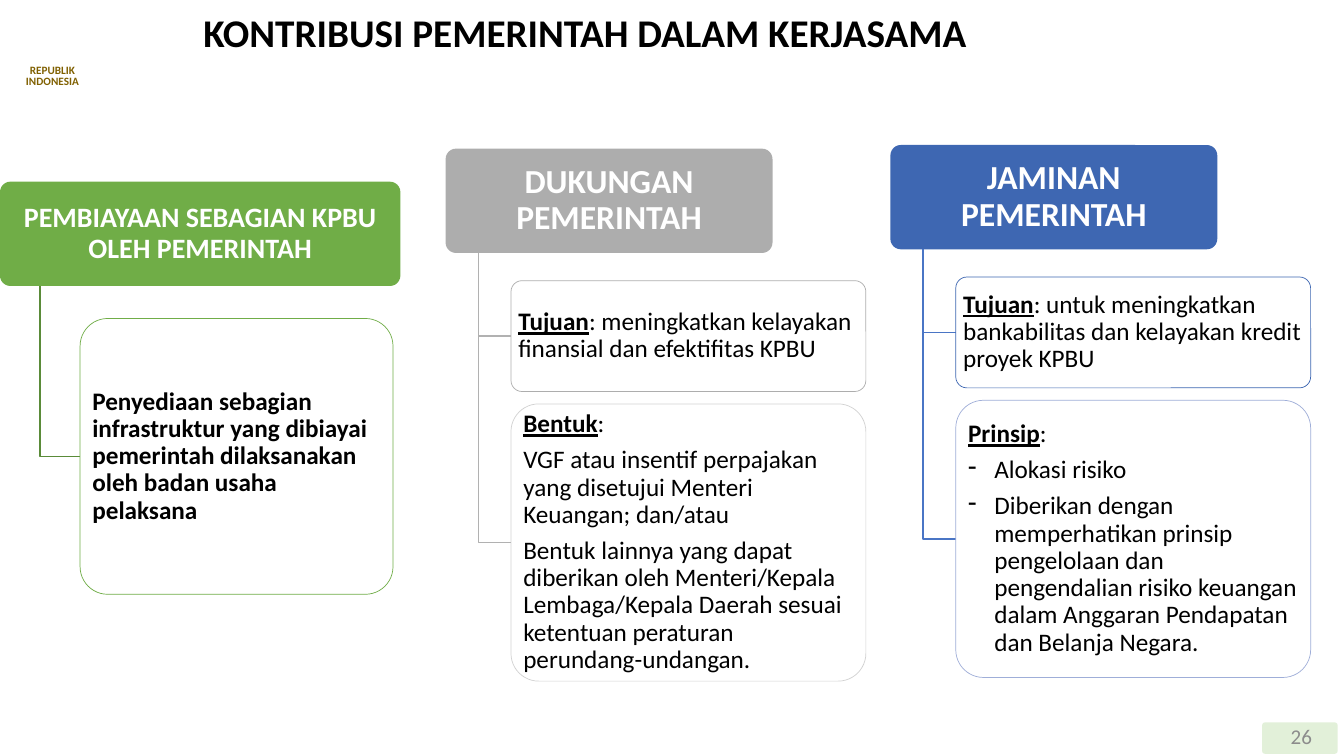
from dataclasses import dataclass

from lxml import etree
from pptx import Presentation
from pptx.dml.color import RGBColor
from pptx.enum.shapes import MSO_SHAPE
from pptx.enum.text import MSO_ANCHOR, MSO_AUTO_SIZE, PP_ALIGN
from pptx.oxml.ns import qn
from pptx.util import Pt

ROUNDED = MSO_SHAPE.ROUNDED_RECTANGLE
MIDDLE, TOP = MSO_ANCHOR.MIDDLE, MSO_ANCHOR.TOP
LEFT, CENTER = PP_ALIGN.LEFT, PP_ALIGN.CENTER
NO_AUTOFIT = MSO_AUTO_SIZE.NONE

FONT = "Calibri"
BLACK = RGBColor(0x00, 0x00, 0x00)
WHITE = RGBColor(0xFF, 0xFF, 0xFF)
GREEN = RGBColor(0x70, 0xAD, 0x47)
DARK_GREEN = RGBColor(0x5A, 0x8B, 0x39)
GRAY = RGBColor(0xA5, 0xA5, 0xA5)
LIGHT_GRAY = RGBColor(0xB1, 0xB1, 0xB1)
BLUE = RGBColor(0x3E, 0x67, 0xB2)
MID_BLUE = RGBColor(0x4A, 0x75, 0xC5)
PALE_BLUE = RGBColor(0x9F, 0xAE, 0xD8)
BADGE_GREEN = RGBColor(0xE2, 0xF0, 0xD9)
NUMBER_GRAY = RGBColor(0x8C, 0x8C, 0x8C)
GOLD = RGBColor(0x80, 0x60, 0x00)

HEAD_HEIGHT = 74.5
DETAIL_GAP = 8.8
BULLET_INDENT = 18.75


@dataclass
class Line:
    text: str
    label: str = ""
    bold: bool = False
    bulleted: bool = False


@dataclass
class Detail:
    height: float
    outline: RGBColor
    lines: list
    outline_opacity: int = 100


@dataclass
class Column:
    left: float
    top: float
    head_width: float
    head: str
    head_size: float
    fill: RGBColor
    elbow: RGBColor
    detail_width: float
    first_gap: float
    details: list
    head_opacity: int = 100


COLUMNS = [
    Column(0, 129.8, 286, "PEMBIAYAAN SEBAGIAN KPBU OLEH PEMERINTAH", 20,
           GREEN, DARK_GREEN, 223.5, 23.2, [
               Detail(197, GREEN, [Line(
                   "Penyediaan sebagian infrastruktur yang dibiayai pemerintah "
                   "dilaksanakan oleh badan usaha pelaksana", bold=True)]),
           ]),
    Column(318.3, 106.2, 233.5, "DUKUNGAN PEMERINTAH", 24,
           GRAY, LIGHT_GRAY, 253.5, 19.8, [
               Detail(79.2, GRAY, [Line(
                   ": meningkatkan kelayakan finansial dan efektifitas KPBU",
                   "Tujuan")], 90),
               Detail(198, GRAY, [
                   Line(":", "Bentuk"),
                   Line("VGF atau insentif perpajakan yang disetujui Menteri "
                        "Keuangan; dan/atau"),
                   Line("Bentuk lainnya yang dapat diberikan oleh Menteri/Kepala "
                        "Lembaga/Kepala Daerah sesuai ketentuan peraturan "
                        "perundang-undangan."),
               ], 50),
           ], 90),
    Column(636, 103.6, 233.5, "JAMINAN PEMERINTAH", 24,
           BLUE, MID_BLUE, 253.5, 19.8, [
               Detail(79.2, BLUE, [Line(
                   ": untuk meningkatkan bankabilitas dan kelayakan kredit "
                   "proyek KPBU", "Tujuan")]),
               Detail(198, PALE_BLUE, [
                   Line(":", "Prinsip"),
                   Line("Alokasi risiko", bulleted=True),
                   Line("Diberikan dengan memperhatikan prinsip pengelolaan dan "
                        "pengendalian risiko keuangan dalam Anggaran Pendapatan "
                        "dan Belanja Negara.", bulleted=True),
               ]),
           ]),
]


def set_frame(frame, anchor, side, edge, wrap=True):
    frame.word_wrap = wrap
    frame.auto_size = NO_AUTOFIT
    frame.vertical_anchor = anchor
    frame.margin_left = frame.margin_right = Pt(side)
    frame.margin_top = frame.margin_bottom = Pt(edge)


def format_para(para, size, color, align, bold=False, spacing=0.9):
    para.alignment = align
    para.line_spacing = spacing
    para.font.name = FONT
    para.font.size = Pt(size)
    para.font.bold = bold
    para.font.color.rgb = color


def add_bullet(para):
    properties = para._p.get_or_add_pPr()
    properties.set("marL", str(Pt(BULLET_INDENT)))
    properties.set("indent", str(-Pt(BULLET_INDENT)))
    etree.SubElement(properties, qn("a:buChar")).set("char", "-")


def write_lines(frame, lines, size, color, align):
    for index, line in enumerate(lines):
        para = frame.paragraphs[0] if index == 0 else frame.add_paragraph()
        if line.label:
            span = para.add_run()
            span.text = line.label
            span.font.bold = span.font.underline = True
        para.add_run().text = line.text
        format_para(para, size, color, align, line.bold)
        para.space_after = Pt(size * 0.35)
        if line.bulleted:
            add_bullet(para)


def set_opacity(holder, percent):
    if percent < 100:
        for color in holder.iter(qn("a:srgbClr")):
            etree.SubElement(color, qn("a:alpha")).set("val", str(percent * 1000))


def add_box(page, left, top, width, height, fill, opacity=100):
    box = page.shapes.add_shape(ROUNDED, Pt(left), Pt(top), Pt(width), Pt(height))
    box.shadow.inherit = False
    box.adjustments[0] = 0.1
    box.fill.solid()
    box.fill.fore_color.rgb = fill
    box.line.fill.background()
    set_opacity(box.fill._xPr.find(qn("a:solidFill")), opacity)
    set_frame(box.text_frame, MIDDLE, 3, 2)
    return box


def add_elbow(page, left, top, right, bottom, color):
    builder = page.shapes.build_freeform(Pt(left), Pt(top))
    builder.add_line_segments(
        [(Pt(left), Pt(bottom)), (Pt(right), Pt(bottom))], close=False)
    elbow = builder.convert_to_shape()
    elbow.shadow.inherit = False
    elbow.fill.background()
    elbow.line.color.rgb = color
    elbow.line.width = Pt(1)


def add_label(page, text, left, top, width, height, size, color, anchor, **style):
    label = page.shapes.add_textbox(Pt(left), Pt(top), Pt(width), Pt(height))
    set_frame(label.text_frame, anchor, 8.6, 4.3)
    label.text_frame.text = text
    format_para(label.text_frame.paragraphs[0], size, color, CENTER, **style)


def add_column(page, column):
    head = add_box(page, column.left, column.top, column.head_width, HEAD_HEIGHT,
                   column.fill, column.head_opacity)
    write_lines(head.text_frame, [Line(column.head, bold=True)],
                column.head_size, WHITE, CENTER)
    trunk = column.left + column.head_width * 0.1
    detail_left = column.left + column.head_width * 0.2
    head_bottom = column.top + HEAD_HEIGHT
    top = head_bottom + column.first_gap
    for detail in column.details:
        add_elbow(page, trunk, head_bottom, detail_left, top + detail.height / 2,
                  column.elbow)
        box = add_box(page, detail_left, top, column.detail_width, detail.height,
                      WHITE, 90)
        box.line.color.rgb = detail.outline
        box.line.width = Pt(0.5)
        set_opacity(box.line._ln, detail.outline_opacity)
        write_lines(box.text_frame, detail.lines, 18, BLACK, LEFT)
        top += detail.height + DETAIL_GAP


def set_title(page, text):
    title = page.shapes.title
    title.left, title.top, title.width, title.height = Pt(138), Pt(6), Pt(680), Pt(38)
    set_frame(title.text_frame, MIDDLE, 7.2, 3.6, wrap=False)
    title.text_frame.text = text
    format_para(title.text_frame.paragraphs[0], 28, BLACK, LEFT, bold=True)


def main():
    deck = Presentation()
    deck.slide_width, deck.slide_height = Pt(960), Pt(540)
    page = deck.slides.add_slide(deck.slide_layouts[5])
    set_title(page, "KONTRIBUSI PEMERINTAH DALAM KERJASAMA")
    badge = add_box(page, 901.5, 516, 54, 22.5, BADGE_GREEN)
    badge.left, badge.width = Pt(901.5), Pt(54)
    add_label(page, "REPUBLIK INDONESIA", 4, 42, 67, 24.5, 8, GOLD, TOP,
              bold=True, spacing=Pt(8.3))
    add_label(page, "26", 900, 511, 59, 29, 15, NUMBER_GRAY, MIDDLE, spacing=1.0)
    for column in COLUMNS:
        add_column(page, column)
    deck.save("out.pptx")


if __name__ == "__main__":
    main()
